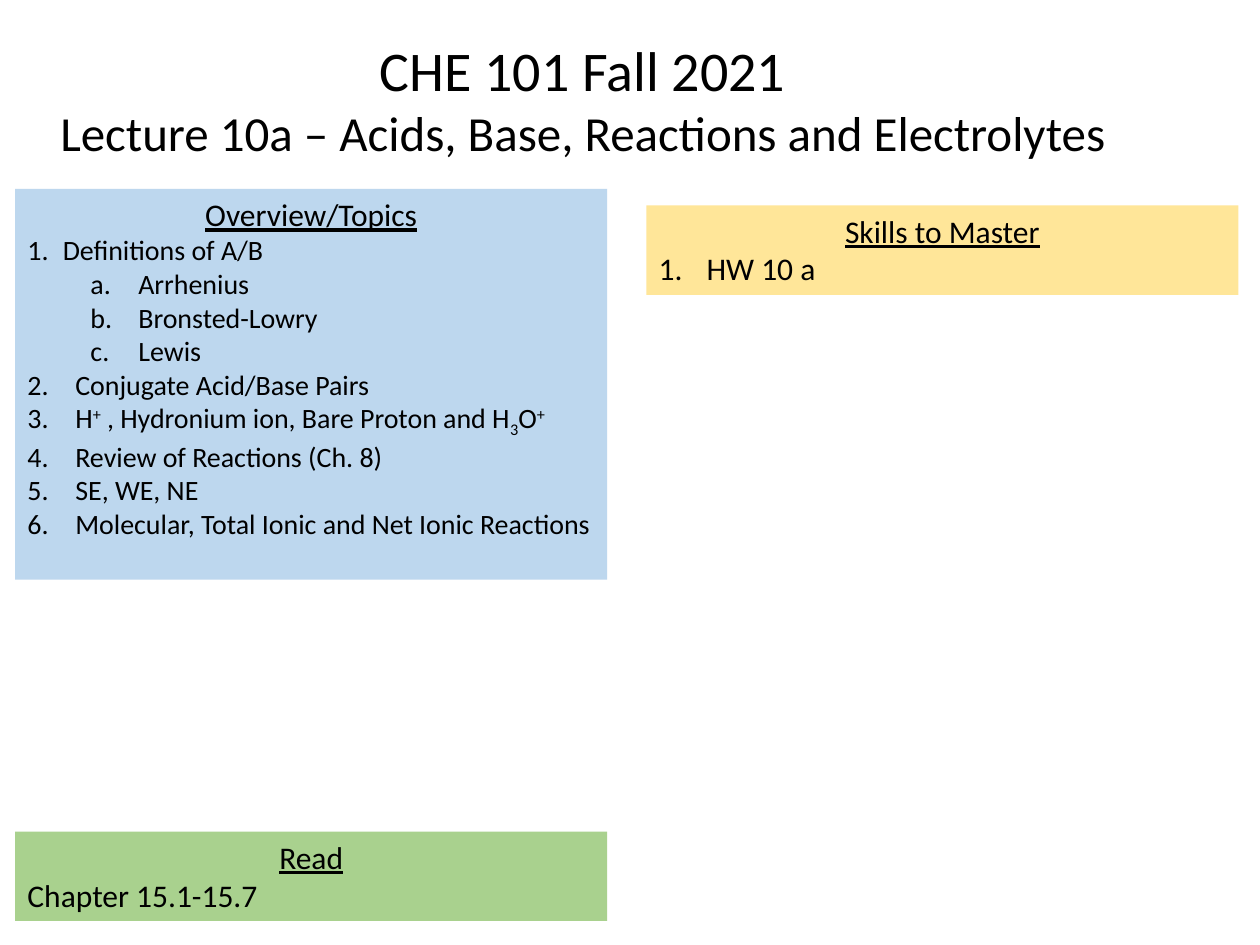
from lxml.etree import SubElement
from pptx import Presentation
from pptx.dml.color import RGBColor
from pptx.enum.text import MSO_ANCHOR, PP_ALIGN
from pptx.oxml.ns import qn
from pptx.util import Inches, Pt

FONT = "Calibri"
SUPER, SUB = 30000, -25000

TITLE = [("CHE 101 Fall 2021", 32),
         ("Lecture 10a – Acids, Base, Reactions and Electrolytes", 28)]

# list style: level, left margin, hanging indent, numbering
FIRST = (0, 0.28, 0.28, "arabicPeriod")
MAIN = (0, 0.38, 0.38, "arabicPeriod")
MINOR = (1, 0.88, 0.38, "alphaLcPeriod")

IONS = [("H", 0), ("+", SUPER), (" , Hydronium ion, Bare Proton and H", 0),
        ("3", SUB), ("O", 0), ("+", SUPER)]
TOPICS = [
    (FIRST, "Definitions of A/B"),
    (MINOR, "Arrhenius"),
    (MINOR, "Bronsted-Lowry"),
    (MINOR, "Lewis"),
    (MAIN, "Conjugate Acid/Base Pairs"),
    (MAIN, IONS),
    (MAIN, "Review of Reactions (Ch. 8)"),
    (MAIN, "SE, WE, NE"),
    (MAIN, "Molecular, Total Ionic and Net Ionic Reactions"),
]

# heading, left, top, height, fill, item size, items
WIDTH = 4.7
PANELS = [
    ("Overview/Topics", 0.12, 1.5, 3.1, "BDD7EE", 16, TOPICS),
    ("Skills to Master", 5.13, 1.63, 0.71, "FFE699", 18, [(MAIN, "HW 10 a")]),
    ("Read", 0.12, 6.6, 0.71, "A9D18E", 18, [(None, "Chapter 15.1-15.7")]),
]


def color(code):
    return RGBColor.from_string(code)


def add_box(left, top, width, height, wrap=True):
    box = slide.shapes.add_textbox(*map(Inches, (left, top, width, height)))
    box.text_frame.word_wrap = wrap
    box.text_frame.vertical_anchor = MSO_ANCHOR.TOP
    return box


def add_line(frame, text, size, align=PP_ALIGN.LEFT):
    """Fill the empty first paragraph, or add one after it."""
    para = frame.paragraphs[0]
    if para.runs:
        para = frame.add_paragraph()
    para.alignment = align
    para.font.name = FONT
    para.font.size = Pt(size)
    para.font.color.rgb = color("000000")
    for part, base in [(text, 0)] if isinstance(text, str) else text:
        run = para.add_run()
        run.text = part
        if base:
            run.font._element.set("baseline", str(base))
    return para


def number(para, style):
    level, left, hang, scheme = style
    para.level = level
    props = para._p.get_or_add_pPr()
    props.set("marL", str(Inches(left)))
    props.set("indent", str(-Inches(hang)))
    mark = SubElement(props, qn("a:buAutoNum"), type=scheme)
    props.find(qn("a:defRPr")).addprevious(mark)


deck = Presentation()
deck.slide_width, deck.slide_height = Inches(10), Inches(7.5)
slide = deck.slides.add_slide(deck.slide_layouts[6])

for heading, left, top, height, fill, size, items in PANELS:
    box = add_box(left, top, WIDTH, height)
    box.fill.solid()
    box.fill.fore_color.rgb = color(fill)
    head = add_line(box.text_frame, heading, 18, PP_ALIGN.CENTER)
    head.runs[0].font.underline = True
    for style, text in items:
        para = add_line(box.text_frame, text, size)
        if style:
            number(para, style)

title = add_box(0.33, 0.23, 8.59, 1.11, wrap=False)
for text, size in TITLE:
    add_line(title.text_frame, text, size, PP_ALIGN.CENTER)

deck.save("out.pptx")
